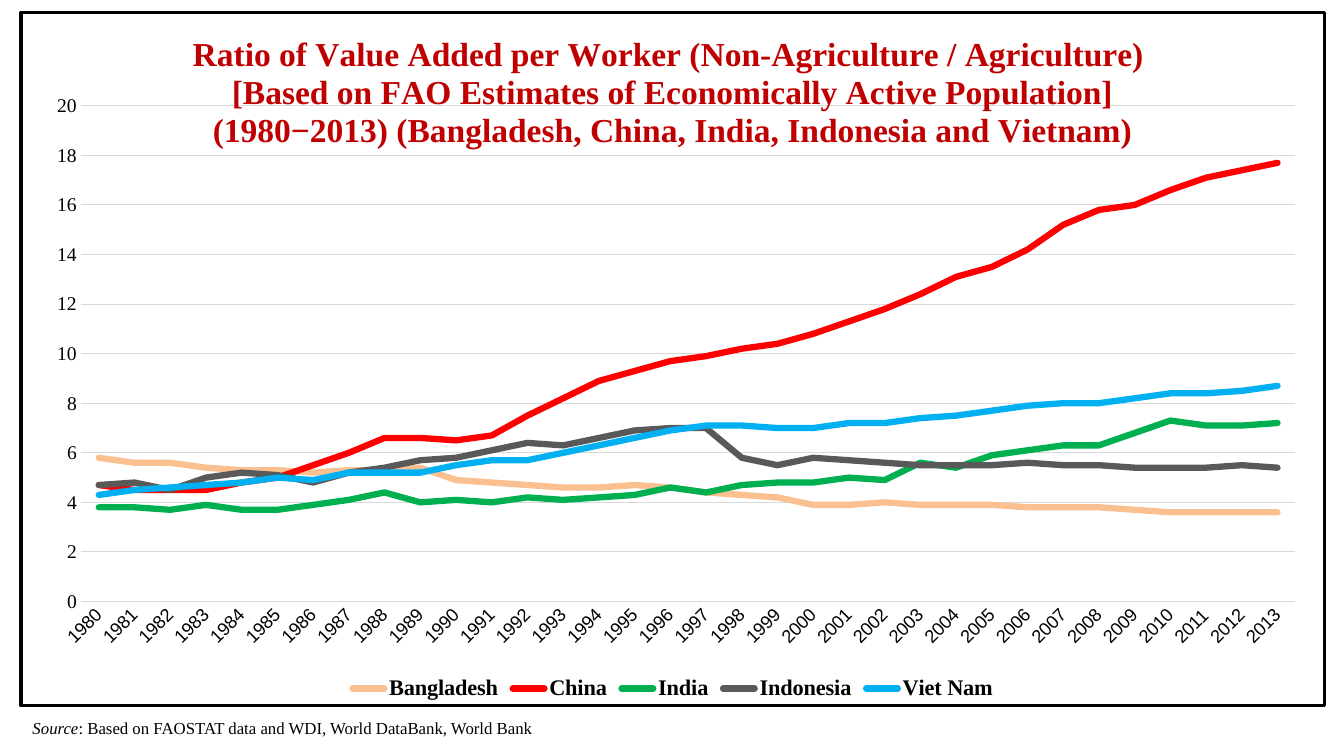
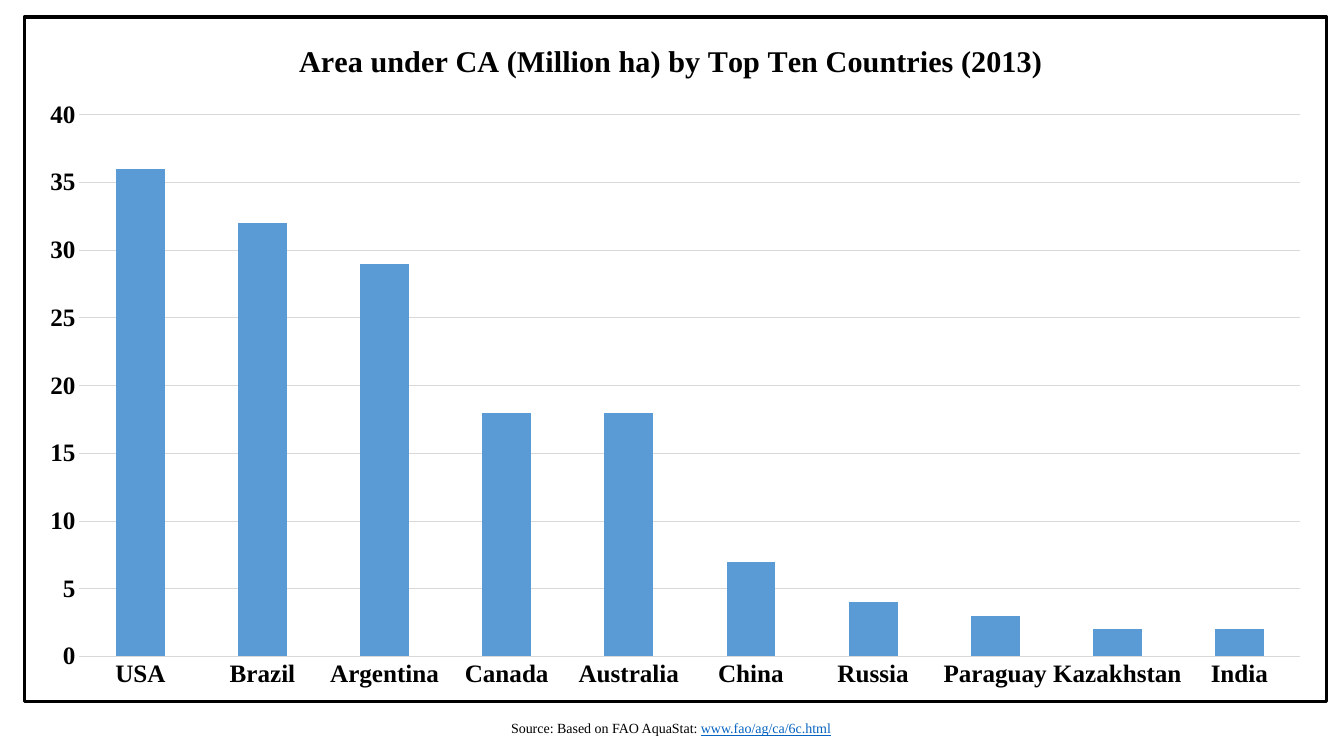
from dataclasses import dataclass

from lxml import etree
from pptx import Presentation
from pptx.chart.chart import Chart
from pptx.chart.data import CategoryChartData
from pptx.dml.color import RGBColor
from pptx.enum.chart import XL_CHART_TYPE, XL_LEGEND_POSITION, XL_TICK_MARK
from pptx.enum.text import MSO_AUTO_SIZE, PP_ALIGN
from pptx.oxml import parse_xml
from pptx.oxml.ns import nsdecls, qn
from pptx.slide import Slide
from pptx.util import Cm, Pt

SERIF = "Times New Roman"
BLACK = "000000"
GRID = "D9D9D9"
LINK = "0563C1"


@dataclass
class Box:
    left: float
    top: float
    width: float
    height: float

    def lengths(self) -> tuple:
        return Cm(self.left), Cm(self.top), Cm(self.width), Cm(self.height)


@dataclass
class Series:
    name: str
    color: str
    values: list[float]


@dataclass
class Run:
    text: str
    color: str = BLACK
    italic: bool = False
    underline: bool = False


@dataclass
class ChartStyle:
    title: list[str]
    title_size: float
    title_color: str
    axis_size: int
    bold: bool
    maximum: int
    step: int


YEARS = [str(year) for year in range(1980, 2014)]
RATIOS = [
    Series("Bangladesh", "FAC090", [
        5.8, 5.6, 5.6, 5.4, 5.3, 5.3, 5.2, 5.3, 5.3, 5.4, 4.9, 4.8,
        4.7, 4.6, 4.6, 4.7, 4.6, 4.4, 4.3, 4.2, 3.9, 3.9, 4, 3.9,
        3.9, 3.9, 3.8, 3.8, 3.8, 3.7, 3.6, 3.6, 3.6, 3.6]),
    Series("China", "FF0000", [
        4.7, 4.5, 4.5, 4.5, 4.8, 5, 5.5, 6, 6.6, 6.6, 6.5, 6.7,
        7.5, 8.2, 8.9, 9.3, 9.7, 9.9, 10.2, 10.4, 10.8, 11.3, 11.8, 12.4,
        13.1, 13.5, 14.2, 15.2, 15.8, 16, 16.6, 17.1, 17.4, 17.7]),
    Series("India", "00B050", [
        3.8, 3.8, 3.7, 3.9, 3.7, 3.7, 3.9, 4.1, 4.4, 4, 4.1, 4,
        4.2, 4.1, 4.2, 4.3, 4.6, 4.4, 4.7, 4.8, 4.8, 5, 4.9, 5.6,
        5.4, 5.9, 6.1, 6.3, 6.3, 6.8, 7.3, 7.1, 7.1, 7.2]),
    Series("Indonesia", "595959", [
        4.7, 4.8, 4.5, 5, 5.2, 5.1, 4.8, 5.2, 5.4, 5.7, 5.8, 6.1,
        6.4, 6.3, 6.6, 6.9, 7, 7, 5.8, 5.5, 5.8, 5.7, 5.6, 5.5,
        5.5, 5.5, 5.6, 5.5, 5.5, 5.4, 5.4, 5.4, 5.5, 5.4]),
    Series("Viet Nam", "00B0F0", [
        4.3, 4.5, 4.6, 4.7, 4.8, 5, 4.9, 5.2, 5.2, 5.2, 5.5, 5.7,
        5.7, 6, 6.3, 6.6, 6.9, 7.1, 7.1, 7, 7, 7.2, 7.2, 7.4,
        7.5, 7.7, 7.9, 8, 8, 8.2, 8.4, 8.4, 8.5, 8.7]),
]
COUNTRIES = ["USA", "Brazil", "Argentina", "Canada", "Australia",
             "China", "Russia", "Paraguay", "Kazakhstan", "India"]
AREAS = [Series("Series 1", "5B9BD5", [36, 32, 29, 18, 18, 7, 4, 3, 2, 2])]


def rgb(color: str) -> RGBColor:
    return RGBColor.from_string(color)


def style_font(font, size: float, color: str = BLACK, bold: bool = False,
               name: str = SERIF) -> None:
    font.name, font.size, font.bold = name, Pt(size), bold
    font.color.rgb = rgb(color)


def style_line(line, color: str, width: float) -> None:
    line.color.rgb = rgb(color)
    line.width = Pt(width)


def frame_chart(chart: Chart) -> None:
    """Give the chart square corners, a white fill and a black border."""
    chart_space = chart._chartSpace
    if chart_space.find(qn("c:roundedCorners")) is None:
        corners = parse_xml(f'<c:roundedCorners {nsdecls("c")} val="0"/>')
        chart_space.find(qn("c:date1904")).addnext(corners)
    chart_space.find(qn("c:chart")).addnext(parse_xml(
        f'<c:spPr {nsdecls("c", "a")}>'
        '<a:solidFill><a:srgbClr val="FFFFFF"/></a:solidFill>'
        f'<a:ln w="{Pt(2.25)}"><a:solidFill><a:srgbClr val="{BLACK}"/>'
        '</a:solidFill></a:ln></c:spPr>'))


def place_plot(chart: Chart, left: float, top: float,
               width: float, height: float) -> None:
    """Fix the inner plot area as fractions of the chart."""
    plot_area = chart._chartSpace.find(f'{qn("c:chart")}/{qn("c:plotArea")}')
    old_layout = plot_area.find(qn("c:layout"))
    if old_layout is not None:
        plot_area.remove(old_layout)
    layout = etree.SubElement(plot_area, qn("c:layout"))
    plot_area.insert(0, layout)
    manual = etree.SubElement(layout, qn("c:manualLayout"))
    settings = {"layoutTarget": "inner", "xMode": "edge", "yMode": "edge",
                "x": left, "y": top, "w": width, "h": height}
    for tag, value in settings.items():
        etree.SubElement(manual, qn(f"c:{tag}")).set("val", str(value))


def add_framed_chart(slide: Slide, kind: XL_CHART_TYPE, box: Box,
                     categories: list[str], series_list: list[Series],
                     style: ChartStyle) -> Chart:
    data = CategoryChartData()
    data.categories = categories
    for series in series_list:
        data.add_series(series.name, series.values)
    chart = slide.shapes.add_chart(kind, *box.lengths(), data).chart
    style_font(chart.font, style.axis_size, bold=style.bold)
    frame_chart(chart)
    chart.has_legend = False
    chart.plots[0].vary_by_categories = False

    # Title
    chart.has_title = True
    title_frame = chart.chart_title.text_frame
    for index, text in enumerate(style.title):
        paragraph = title_frame.add_paragraph() if index else title_frame.paragraphs[0]
        paragraph.text = text
        style_font(paragraph.font, style.title_size, style.title_color, True)

    # Axes
    for axis in (chart.category_axis, chart.value_axis):
        axis.major_tick_mark = axis.minor_tick_mark = XL_TICK_MARK.NONE
        axis.format.line.fill.background()
        style_font(axis.tick_labels.font, style.axis_size, bold=style.bold)
    value_axis = chart.value_axis
    value_axis.minimum_scale, value_axis.maximum_scale = 0, style.maximum
    value_axis.major_unit = style.step
    value_axis.has_major_gridlines = True
    style_line(value_axis.major_gridlines.format.line, GRID, 0.75)
    return chart


def add_source(slide: Slide, box: Box, runs: list[Run], size: int,
               alignment: PP_ALIGN) -> None:
    frame = slide.shapes.add_textbox(*box.lengths()).text_frame
    frame.word_wrap = True
    frame.auto_size = MSO_AUTO_SIZE.SHAPE_TO_FIT_TEXT
    paragraph = frame.paragraphs[0]
    paragraph.alignment = alignment
    paragraph.font.name, paragraph.font.size = SERIF, Pt(size)
    for item in runs:
        run = paragraph.add_run()
        run.text = item.text
        run.font.color.rgb = rgb(item.color)
        run.font.italic, run.font.underline = item.italic, item.underline


def build_ratio_slide(slide: Slide) -> None:
    style = ChartStyle(
        ["Ratio of Value Added per Worker (Non-Agriculture / Agriculture) ",
         "[Based on FAO Estimates of Economically Active Population]",
         "(1980−2013) (Bangladesh, China, India, Indonesia and Vietnam)"],
        24, "C00000", 14, False, 20, 2)
    chart = add_framed_chart(slide, XL_CHART_TYPE.LINE,
                             Box(0.49, 0.27, 32.92, 17.55), YEARS, RATIOS, style)
    chart.chart_title.include_in_layout = True
    place_plot(chart, 0.046, 0.135, 0.932, 0.715)

    # Year labels turn by themselves when they are crowded
    year_axis = chart.category_axis
    style_line(year_axis.format.line, GRID, 0.75)
    style_font(year_axis.tick_labels.font, 13, name="Arial")
    body = year_axis._element.find(f'{qn("c:txPr")}/{qn("a:bodyPr")}')
    body.set("rot", "-60000000")
    body.set("vert", "horz")

    # Country lines with round ends
    for line_series, series in zip(chart.plots[0].series, RATIOS):
        line_series.smooth = False
        style_line(line_series.format.line, series.color, 4.5)
        outline = line_series._element.find(f'{qn("c:spPr")}/{qn("a:ln")}')
        outline.set("cap", "rnd")

    chart.has_legend = True
    chart.legend.position = XL_LEGEND_POSITION.BOTTOM
    chart.legend.include_in_layout = False
    style_font(chart.legend.font, 16, bold=True)

    add_source(slide, Box(0.57, 17.96, 32.79, 1.27),
               [Run("Source", italic=True),
                Run(": Based on FAOSTAT data and WDI, World DataBank, World Bank")],
               12, PP_ALIGN.LEFT)


def build_area_slide(slide: Slide) -> None:
    style = ChartStyle(["Area under CA (Million ha) by Top Ten Countries (2013) "],
                       21.6, BLACK, 18, True, 40, 5)
    chart = add_framed_chart(slide, XL_CHART_TYPE.COLUMN_CLUSTERED,
                             Box(0.57, 0.39, 32.9, 17.32), COUNTRIES, AREAS, style)
    chart.chart_title.include_in_layout = False
    plot = chart.plots[0]
    plot.gap_width = 150
    for bar_series, series in zip(plot.series, AREAS):
        bar_series.format.fill.solid()
        bar_series.format.fill.fore_color.rgb = rgb(series.color)

    add_source(slide, Box(0.35, 18.01, 33.12, 0.9),
               [Run("Source: Based on FAO AquaStat: "),
                Run("www.fao/ag/ca/6c.html", LINK, underline=True)],
               10, PP_ALIGN.CENTER)


def main() -> None:
    presentation = Presentation()
    presentation.slide_width, presentation.slide_height = Cm(33.87), Cm(19.05)
    blank_layout = presentation.slide_layouts[6]
    for build in (build_ratio_slide, build_area_slide):
        build(presentation.slides.add_slide(blank_layout))
    presentation.save("out.pptx")


if __name__ == "__main__":
    main()
